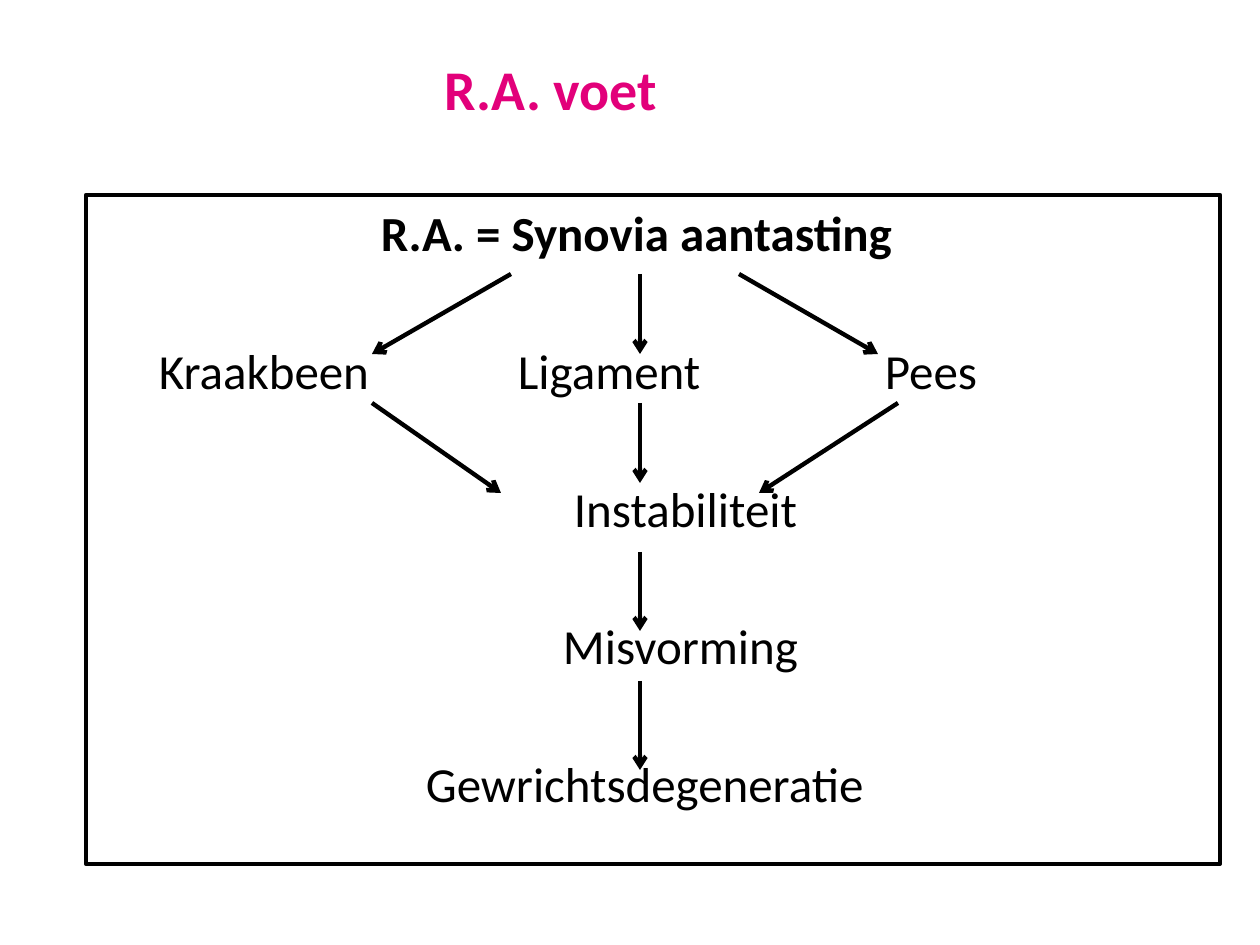
"""Build the slide 'R.A. voet': a flow from synovia damage to joint degeneration."""
import pptx
import pptx.util
import pptx.dml.color
import pptx.enum.shapes
import pptx.enum.text
import pptx.oxml.ns
from lxml import etree

PX = 914400 // 126
BLACK = pptx.dml.color.RGBColor(0x00, 0x00, 0x00)
PINK = pptx.dml.color.RGBColor(0xE2, 0x00, 0x7A)
LINE_WIDTH = pptx.util.Pt(2.5)
qn = pptx.oxml.ns.qn


def set_font(paragraph, size, color, bold):
    paragraph.font.name = "Calibri"
    paragraph.font.size = pptx.util.Pt(size)
    paragraph.font.color.rgb = color
    paragraph.font.bold = bold


def prepare_frame(shape, anchor, top_inset):
    frame = shape.text_frame
    frame.word_wrap = True
    frame.vertical_anchor = anchor
    frame.margin_left = frame.margin_right = frame.margin_bottom = 0
    frame.margin_top = top_inset * PX
    return frame


presentation = pptx.Presentation()
presentation.slide_width = 1260 * PX
presentation.slide_height = 945 * PX
slide = presentation.slides.add_slide(presentation.slide_layouts[6])

title = slide.shapes.add_textbox(92 * PX, 52 * PX, 918 * PX, 72 * PX)
title_frame = prepare_frame(title, pptx.enum.text.MSO_ANCHOR.MIDDLE, 0)
paragraph = title_frame.paragraphs[0]
paragraph.text = "R.A. voet"
paragraph.alignment = pptx.enum.text.PP_ALIGN.CENTER
set_font(paragraph, 32, PINK, True)

diagram = slide.shapes.add_shape(
    pptx.enum.shapes.MSO_SHAPE.RECTANGLE, 86 * PX, 195 * PX, 1134 * PX, 669 * PX)
diagram.shadow.inherit = False
diagram.fill.background()
diagram.line.color.rgb = BLACK
diagram.line.width = LINE_WIDTH
diagram_frame = prepare_frame(diagram, pptx.enum.text.MSO_ANCHOR.TOP, 8)

rows = [
    [(295, "R.A. = Synovia aantasting")],
    [(73, "Kraakbeen"), (432, "Ligament"), (799, "Pees")],
    [(488, "Instabiliteit")],
    [(477, "Misvorming")],
    [(340, "Gewrichtsdegeneratie")],
]
for index, row in enumerate(rows):
    paragraph = diagram_frame.paragraphs[0] if index == 0 else diagram_frame.add_paragraph()
    paragraph.text = "".join("\t" + label for _, label in row)
    paragraph.alignment = pptx.enum.text.PP_ALIGN.LEFT
    if index:
        paragraph.space_before = pptx.util.Pt(45)
    properties = paragraph._p.get_or_add_pPr()
    tab_list = etree.SubElement(properties, qn("a:tabLst"))
    for position, _ in row:
        etree.SubElement(tab_list, qn("a:tab"), pos=str(position * PX), algn="l")
    set_font(paragraph, 28, BLACK, index == 0)

arrows = [
    (640, 274, 640, 354),
    (640, 403, 640, 483),
    (640, 552, 640, 631),
    (640, 681, 640, 770),
    (739, 274, 878, 354),
    (511, 274, 372, 354),
    (372, 403, 501, 493),
    (898, 403, 759, 493),
]
for arrow in arrows:
    connector = slide.shapes.add_connector(
        pptx.enum.shapes.MSO_CONNECTOR.STRAIGHT, *(value * PX for value in arrow))
    connector.line.color.rgb = BLACK
    connector.line.width = LINE_WIDTH
    etree.SubElement(connector.line._get_or_add_ln(), qn("a:tailEnd"), type="arrow")
    etree.SubElement(connector._element.spPr, qn("a:effectLst"))

presentation.save("out.pptx")
